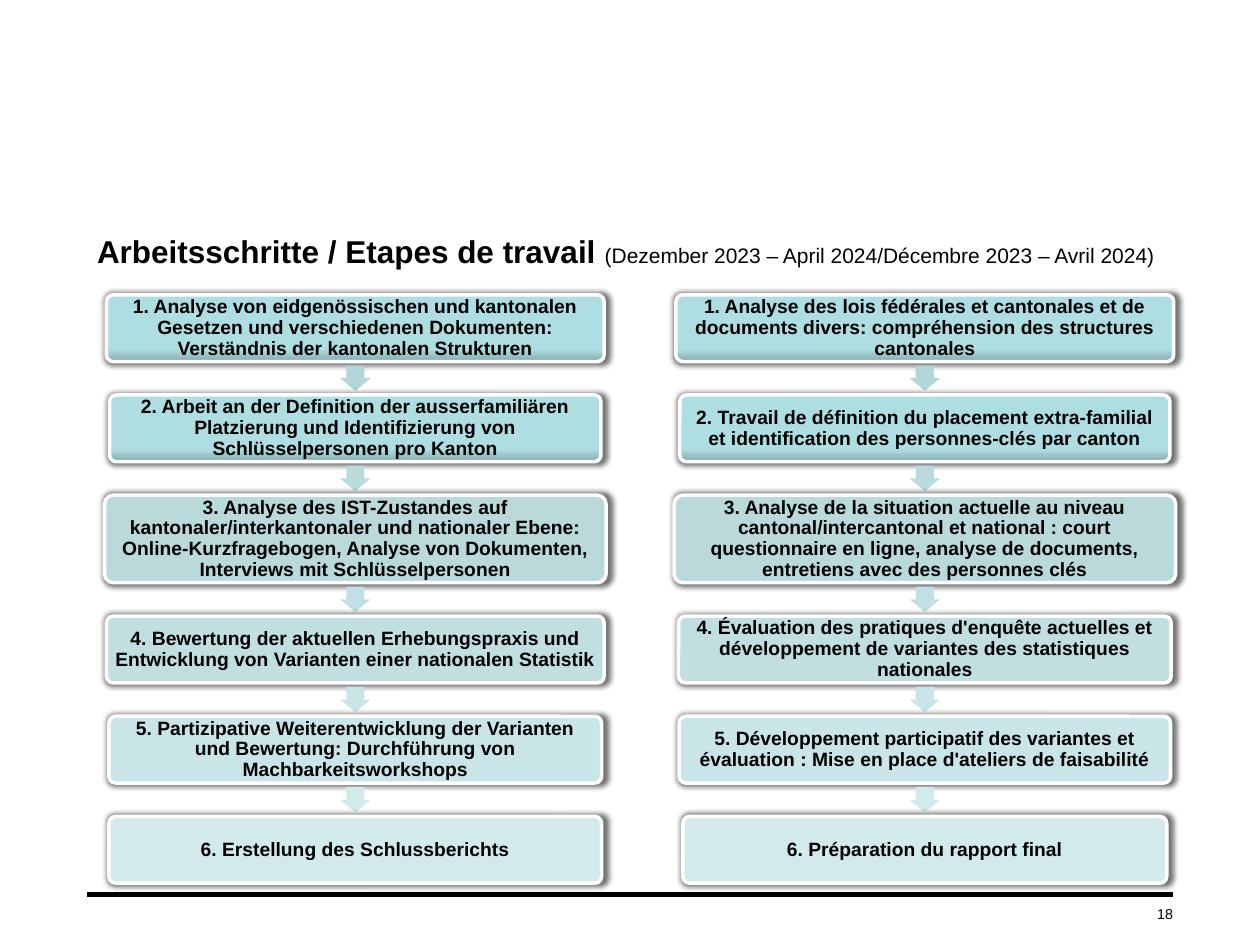
from copy import deepcopy

from lxml.etree import SubElement
from pptx import Presentation
from pptx.dml.color import RGBColor
from pptx.enum.shapes import MSO_CONNECTOR, MSO_SHAPE
from pptx.enum.text import MSO_ANCHOR, PP_ALIGN
from pptx.oxml.ns import qn
from pptx.util import Inches, Pt

BLACK = RGBColor(0x00, 0x00, 0x00)
WHITE = RGBColor(0xFF, 0xFF, 0xFF)
EDGE = RGBColor(0x87, 0xAB, 0xAE)
TEAL = RGBColor(0xAF, 0xDE, 0xE2)
TEAL_TOP = RGBColor(0xAF, 0xE0, 0xE4)
GLOSSY = [(0, EDGE), (0.19, TEAL), (1, TEAL_TOP)]
STEP_FILLS = [
    GLOSSY,
    GLOSSY,
    RGBColor(0xB9, 0xD9, 0xDB),
    RGBColor(0xC1, 0xDF, 0xE1),
    RGBColor(0xCA, 0xE5, 0xE7),
    RGBColor(0xD3, 0xEA, 0xEC),
]
ARROW_FILLS = [
    RGBColor(0xB3, 0xD6, 0xD9),
    RGBColor(0xBA, 0xDB, 0xDE),
    RGBColor(0xC2, 0xE0, 0xE3),
    RGBColor(0xCA, 0xE5, 0xE8),
    RGBColor(0xD3, 0xEA, 0xEC),
]

COLUMNS, ROWS = 100, 75
FIRST_ROW, STEP_GAP = 23.4, 2.65
STEP_HEIGHTS = [5.3, 5.3, 6.95, 5.3, 5.3, 5.3]

GERMAN_STEPS = [
    (39.5, "1. Analyse von eidgenössischen und kantonalen Gesetzen und verschiedenen Dokumenten: Verständnis der kantonalen Strukturen"),
    (39, "2. Arbeit an der Definition der ausserfamiliären Platzierung und Identifizierung von Schlüsselpersonen pro Kanton"),
    (39.8, "3. Analyse des IST-Zustandes auf kantonaler/interkantonaler und nationaler Ebene: Online-Kurzfragebogen, Analyse von Dokumenten, Interviews mit Schlüsselpersonen"),
    (39.5, "4. Bewertung der aktuellen Erhebungspraxis und Entwicklung von Varianten einer nationalen Statistik"),
    (39.1, "5. Partizipative Weiterentwicklung der Varianten und Bewertung: Durchführung von Machbarkeitsworkshops"),
    (39.1, "6. Erstellung des Schlussberichts"),
]
FRENCH_STEPS = [
    (39.5, "1. Analyse des lois fédérales et cantonales et de documents divers: compréhension des structures cantonales"),
    (38.9, "2. Travail de définition du placement extra-familial et identification des personnes-clés par canton"),
    (39.8, "3. Analyse de la situation actuelle au niveau cantonal/intercantonal et national : court questionnaire en ligne, analyse de documents, entretiens avec des personnes clés"),
    (39.1, "4. Évaluation des pratiques d'enquête actuelles et développement de variantes des statistiques nationales"),
    (39, "5. Développement participatif des variantes et évaluation : Mise en place d'ateliers de faisabilité"),
    (38.4, "6. Préparation du rapport final"),
]


class Deck:
    font = "Arial"

    def __init__(self):
        self.presentation = Presentation()
        self.presentation.slide_width = Inches(10)
        self.presentation.slide_height = Inches(7.5)
        self.slide = self.presentation.slides.add_slide(self.presentation.slide_layouts[6])

    def place(self, column, row, width, height):
        across = self.presentation.slide_width / COLUMNS
        down = self.presentation.slide_height / ROWS
        return [round(n) for n in (column * across, row * down, width * across, height * down)]

    def style(self, font, size, bold=False):
        font.name, font.size, font.bold = self.font, Pt(size), bold
        font.color.rgb = BLACK

    def frame(self, shape, anchor, inset=0):
        frame = shape.text_frame
        frame.word_wrap = True
        frame.vertical_anchor = anchor
        frame.margin_left = frame.margin_right = Inches(inset)
        frame.margin_top = frame.margin_bottom = Inches(inset)
        return frame

    def text(self, area, runs, anchor=MSO_ANCHOR.TOP, align=PP_ALIGN.LEFT):
        box = self.slide.shapes.add_textbox(*self.place(*area))
        frame = self.frame(box, anchor)
        paragraph = frame.paragraphs[0]
        paragraph.alignment = align
        for words, size, bold in runs:
            run = paragraph.add_run()
            run.text = words
            self.style(run.font, size, bold)
        return frame

    def rule(self, start, end, row, weight):
        left, top, width, _ = self.place(start, row, end - start, 0)
        line = self.slide.shapes.add_connector(MSO_CONNECTOR.STRAIGHT, left, top, left + width, top)
        line.line.color.rgb = BLACK
        line.line.width = Pt(weight)
        SubElement(line._element.spPr, qn("a:effectLst"))

    def paint(self, shape, fill):
        if isinstance(fill, RGBColor):
            shape.fill.solid()
            shape.fill.fore_color.rgb = fill
            return
        shape.fill.gradient()
        shape.fill.gradient_angle = 90
        stop_list = shape._element.spPr.find(".//" + qn("a:gsLst"))
        stop_list.append(deepcopy(stop_list[-1]))
        for stop, (position, color) in zip(shape.fill.gradient_stops, fill):
            stop.position = position
            stop.color.rgb = color

    def halo(self, shape):
        effects = shape._element.spPr.find(qn("a:effectLst"))
        shadow = SubElement(effects, qn("a:outerShdw"), blurRad="40000", dist="12700",
                            dir="0", sx="101000", sy="104000", algn="ctr", rotWithShape="0")
        color = SubElement(shadow, qn("a:srgbClr"), val=str(BLACK))
        SubElement(color, qn("a:alpha"), val="55000")

    def step(self, center, row, width, height, words, fill):
        box = self.slide.shapes.add_shape(
            MSO_SHAPE.ROUNDED_RECTANGLE, *self.place(center - width / 2, row, width, height))
        box.adjustments[0] = 0.1
        box.shadow.inherit = False
        self.paint(box, fill)
        box.line.color.rgb = WHITE
        box.line.width = Pt(2)
        self.halo(box)
        paragraph = self.frame(box, MSO_ANCHOR.MIDDLE, 0.05).paragraphs[0]
        paragraph.text = words
        paragraph.alignment = PP_ALIGN.CENTER
        paragraph.line_spacing = 0.9
        self.style(paragraph.font, 11, True)

    def arrow(self, center, middle, fill):
        length, breadth = 2, 2.4
        arrow = self.slide.shapes.add_shape(
            MSO_SHAPE.RIGHT_ARROW,
            *self.place(center - length / 2, middle - breadth / 2, length, breadth))
        arrow.adjustments[0] = 0.6
        arrow.rotation = 90
        arrow.shadow.inherit = False
        self.paint(arrow, fill)
        arrow.line.fill.background()

    def process(self, center, steps):
        row = FIRST_ROW
        for index, (width, words) in enumerate(steps):
            height = STEP_HEIGHTS[index]
            self.step(center, row, width, height, words, STEP_FILLS[index])
            row += height
            if index < len(ARROW_FILLS):
                self.arrow(center, row + STEP_GAP / 2, ARROW_FILLS[index])
            row += STEP_GAP


def main():
    deck = Deck()
    deck.rule(6.9, 93.1, 71, 3)
    deck.text((85, 71.4, 8.1, 1.8), [("18", 8.2, False)], MSO_ANCHOR.BOTTOM, PP_ALIGN.RIGHT)
    title = deck.text((6.9, 18.1, 86.2, 2.7), [
        ("Arbeitsschritte / Etapes de travail ", 18, True),
        ("(Dezember 2023 – April 2024/Décembre 2023 – Avril 2024)", 12, False),
    ])
    title.margin_left = Inches(0.08)
    title.margin_top = Inches(0.03)
    deck.process(73.4, FRENCH_STEPS)
    deck.process(28.2, GERMAN_STEPS)
    deck.presentation.save("out.pptx")


if __name__ == "__main__":
    main()
